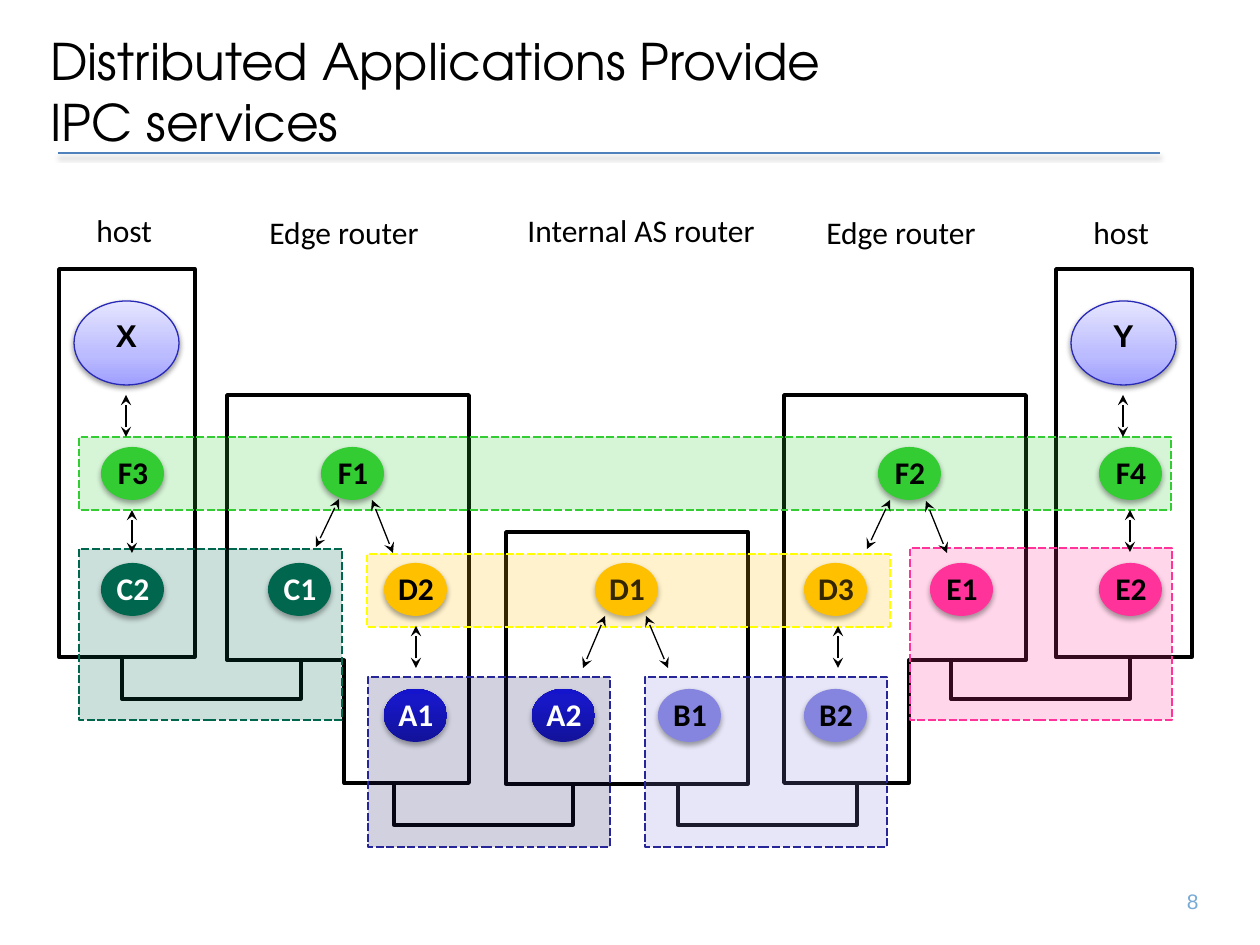
from pptx import Presentation
from pptx import util as u
from pptx.dml.color import RGBColor
from pptx.enum import dml, shapes, text
from pptx.oxml import parse_xml
from pptx.oxml.ns import nsdecls, qn

PX = 914400 / 126
rgb = RGBColor.from_string
KINDS = shapes.MSO_SHAPE
ALIGN = text.PP_ALIGN

prs = Presentation()
prs.slide_width, prs.slide_height = u.Inches(10), u.Inches(7.5)
slide = prs.slides.add_slide(prs.slide_layouts[6])


def draw(kind, box, fill, line=None, width=2, alpha=None, shadow=None):
    """Add a preset shape; fill is a hex colour or a list of gradient stops."""
    item = slide.shapes.add_shape(kind, *[round(v * PX) for v in box])
    item.shadow.inherit = False
    props = item._element.spPr
    if isinstance(fill, list):
        item.fill.gradient()
        item.fill.gradient_angle = 90
        stops = props.find(qn("a:gradFill")).find(qn("a:gsLst"))
        for old in list(stops):
            stops.remove(old)
        for position, colour in fill:
            stops.append(parse_xml(
                f'<a:gs {nsdecls("a")} pos="{position * 1000}"><a:srgbClr val="{colour}"/></a:gs>'))
    else:
        item.fill.solid()
        item.fill.fore_color.rgb = rgb(fill)
    if alpha:
        props.find(qn("a:solidFill"))[0].append(
            parse_xml(f'<a:alpha {nsdecls("a")} val="{alpha * 1000}"/>'))
    if line:
        item.line.color.rgb = rgb(line)
        item.line.width = u.Pt(width)
    else:
        item.line.fill.background()
    if shadow:
        props.find(qn("a:effectLst")).append(parse_xml(SHADOW % shadow))
    return item


def label(words, box, size=18, font="Calibri", colour="000000", bold=False,
          align=ALIGN.LEFT, anchor=text.MSO_ANCHOR.TOP, wrap=True):
    frame = slide.shapes.add_textbox(*[round(v * PX) for v in box]).text_frame
    frame.word_wrap = wrap
    frame.vertical_anchor = anchor
    frame.text = words
    line = frame.paragraphs[0]
    line.alignment = align
    line.font.size, line.font.name, line.font.bold = u.Pt(size), font, bold
    line.font.color.rgb = rgb(colour)


# Shadow values: blur, distance, opacity
SHADOW = (f'<a:outerShdw {nsdecls("a")} blurRad="%d" dist="%d" dir="5400000" rotWithShape="0">'
          '<a:srgbClr val="000000"><a:alpha val="%d"/></a:srgbClr></a:outerShdw>')
SOFT = (39370, 20320, 38000)
NODE = (39370, 22860, 35000)

# Title and rule
rule = slide.shapes.add_connector(
    shapes.MSO_CONNECTOR.STRAIGHT, *[round(v * PX) for v in (58, 153, 1160, 153)])
rule.line.color.rgb = rgb("4F81BD")
rule.line.width = u.Pt(1)
effects = parse_xml(f'<a:effectLst {nsdecls("a")}/>')
effects.append(parse_xml(SHADOW % SOFT))
rule._element.spPr.append(effects)
label("Distributed Applications Provide \vIPC services", (38, 28, 1036, 126), 28.8,
      "TeX Gyre Adventor", anchor=text.MSO_ANCHOR.MIDDLE)

# Wires between systems, with white bands hiding their upper parts
for wires, y, band in (((678, 394), 573, (21, 542, 1207, 95)),
                       ((951, 122), 447, (142, 437, 977, 95))):
    for x in wires:
        draw(KINDS.RECTANGLE, (x, y, 179, 252), "FFFFFF", "000000")
    draw(KINDS.RECTANGLE, band, "FFFFFF")

# Hosts and routers
for x in (59, 1056):
    draw(KINDS.RECTANGLE, (x, 269, 136, 388), "FFFFFF", "000000")
for x, mirrored in ((227, False), (784, True)):
    edge = draw(KINDS.CORNER, (x, 395, 242, 388), "FFFFFF", "000000")
    edge.adjustments[0], edge.adjustments[1] = 1.096, 0.516
    edge.rotation = 180
    if mirrored:
        edge._element.spPr.xfrm.set("flipH", "1")
draw(KINDS.RECTANGLE, (506, 532, 242, 252), "FFFFFF", "000000")

for words, x, y, w in (("host", 84, 205, 86), ("Edge router", 257, 207, 192),
                       ("Internal AS router", 515, 205, 273),
                       ("Edge router", 814, 207, 192), ("host", 1081, 207, 86)):
    label(words, (x, y, w, 49), wrap=False)

# Applications
for name, x in (("X", 74), ("Y", 1071)):
    app = draw(KINDS.OVAL, (x, 301, 105, 84), [(0, "9F9FFF"), (35, "BBBBFF"), (100, "E5E5FF")],
               "2929B8", 0.75, shadow=SOFT)
    app.text_frame.vertical_anchor = text.MSO_ANCHOR.TOP
    app.text_frame.text = name
    line = app.text_frame.paragraphs[0]
    line.alignment, line.line_spacing = ALIGN.CENTER, 0.94
    line.font.size, line.font.name, line.font.bold = u.Pt(18), "Arial", True
    line.font.color.rgb = rgb("000000")

# IPC facilities: area, area fill, border, node fill, text colour, node top, nodes
DEEP_BLUE = [(0, "12129A"), (80, "1717C8"), (100, "1414CC")]
facilities = (
    ((79, 437, 1092, 73), "33CC33", "33CC33", "33CC33", "000000", 447,
     {"F1": 321, "F2": 878, "F3": 101, "F4": 1099}),
    ((368, 677, 242, 170), "191966", "262699", DEEP_BLUE, "FFFFFF", 689, {"A1": 384, "A2": 532}),
    ((645, 677, 242, 170), "8585E0", "262699", "8585E0", "000000", 689, {"B1": 658, "B2": 804}),
    ((79, 549, 263, 171), "00664D", "00664D", "00664D", "FFFFFF", 563, {"C2": 101, "C1": 268}),
    ((910, 548, 262, 172), "FF3399", "FF3399", "FF3399", "000000", 563, {"E1": 930, "E2": 1099}),
    # D1 and D3 lie under the area of their facility, D2 on top
    (None, None, None, "FFC000", "000000", 563, {"D1": 595, "D3": 804}),
    ((367, 554, 523, 73), "FFC000", "FFFF00", "FFC000", "000000", 563, {"D2": 384}),
)
for area, tint, border, fill, colour, y, nodes in facilities:
    if area:
        region = draw(KINDS.RECTANGLE, area, tint, border, 1.5, alpha=20)
        region.line.dash_style = dml.MSO_LINE.SQUARE_DOT
    for name, x in nodes.items():
        draw(KINDS.OVAL, (x, y, 63, 53), fill, shadow=NODE)
        label(name, (x - 10, y, 84, 49), colour=colour, bold=True, align=ALIGN.CENTER)

# Two-headed arrows between layers
for ends in ((583, 668, 605, 616), (668, 668, 646, 616), (393, 553, 372, 500),
             (126, 437, 126, 395), (1123, 437, 1123, 395), (867, 549, 890, 500),
             (132, 553, 132, 510), (1130, 552, 1130, 510), (947, 553, 926, 501),
             (316, 547, 339, 499), (416, 668, 416, 626), (838, 668, 838, 626)):
    arrow = slide.shapes.add_connector(
        shapes.MSO_CONNECTOR.STRAIGHT, *[round(v * PX) for v in ends])
    arrow.line.color.rgb = rgb("000000")
    arrow.line.width = u.Pt(0.75)
    for end in ("headEnd", "tailEnd"):
        arrow.line._get_or_add_ln().append(
            parse_xml(f'<a:{end} {nsdecls("a")} type="stealth"/>'))
    arrow._element.spPr.append(parse_xml(f'<a:effectLst {nsdecls("a")}/>'))

# Slide number
label("8", (960, 876, 251, 50), 12, "Arial", "78AAD6", align=ALIGN.RIGHT,
      anchor=text.MSO_ANCHOR.MIDDLE)

prs.save("out.pptx")
